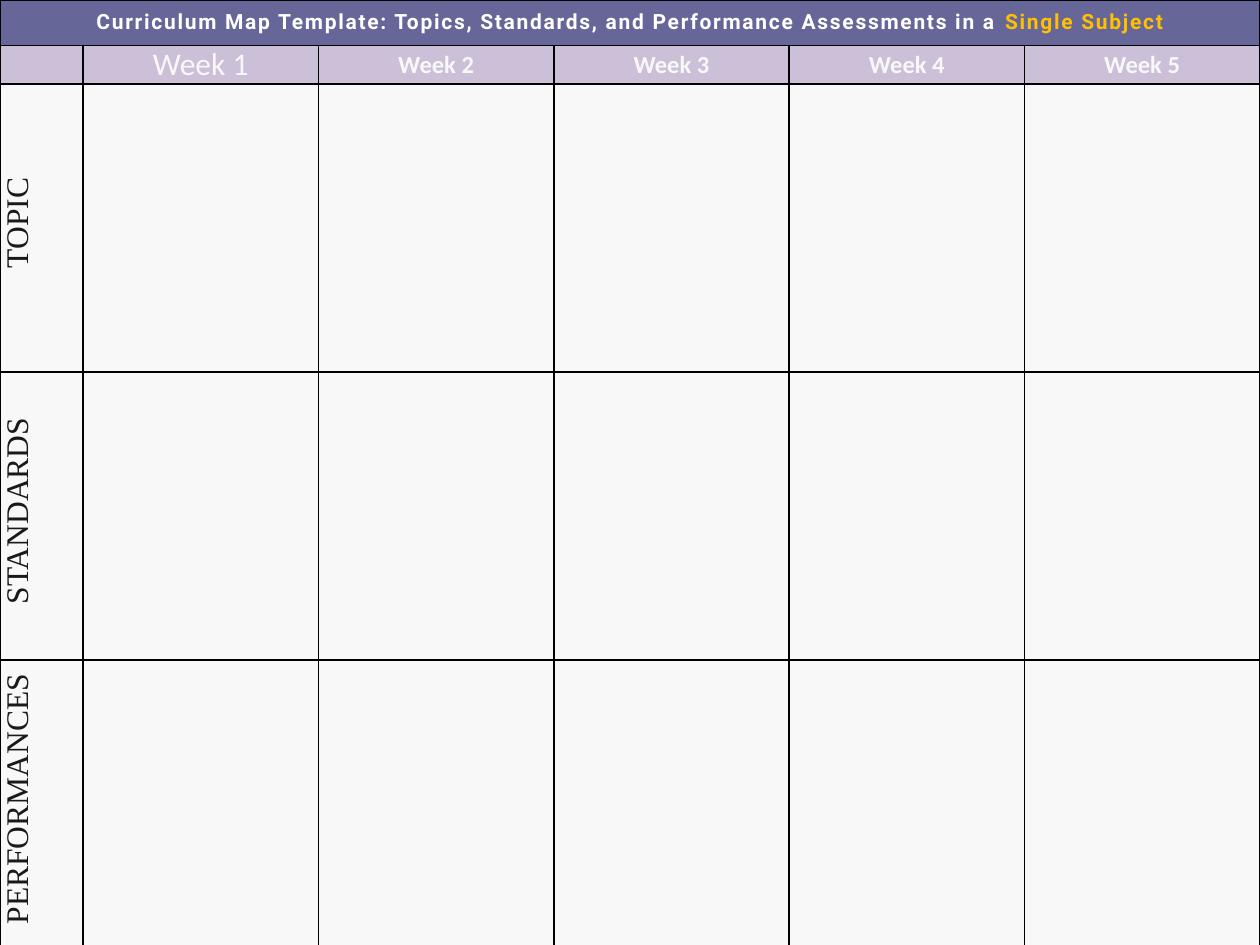
import lxml.etree
import pptx
import pptx.dml.color
import pptx.enum.text
import pptx.oxml.ns
import pptx.util

RGBColor = pptx.dml.color.RGBColor
NAVY = RGBColor(0x03, 0x1F, 0x73)
PURPLE = RGBColor(0x66, 0x66, 0x99)
LILAC = RGBColor(0xCC, 0xC0, 0xD9)
PAPER = RGBColor(0xF8, 0xF8, 0xF8)
WHITE = RGBColor(0xFF, 0xFF, 0xFF)
GOLD = RGBColor(0xFF, 0xC0, 0x00)
INK = RGBColor(0x19, 0x19, 0x19)
BLACK = RGBColor(0, 0, 0)

WIDTH, HEIGHT = 10, 7.5
LABEL_WIDTH = 0.66
TITLE_HEIGHT, WEEK_HEIGHT, TABLE_HEIGHT = 0.36, 0.29, 7.51
WEEKS = 5
SECTIONS = ["TOPIC", "STANDARDS", "PERFORMANCES"]


def add_text(paragraph, text, font="Calibri", size=14, color=PAPER, bold=False, spacing=0):
    """Add a formatted run; spacing is the letter spacing in points."""
    paragraph.alignment = pptx.enum.text.PP_ALIGN.CENTER
    run = paragraph.add_run()
    run.text = text
    run.font.name = font
    run.font.size = pptx.util.Pt(size)
    run.font.bold = bold
    run.font.color.rgb = color
    if spacing:
        run.font._element.set("spc", str(int(spacing * 100)))


class CurriculumMap:
    def __init__(self, presentation):
        self.slide = presentation.slides.add_slide(presentation.slide_layouts[6])
        background = self.slide.background.fill
        background.solid()
        background.fore_color.rgb = NAVY

    def grid(self, column_widths, row_heights):
        """Add an unstyled table with the given tracks in inches."""
        inches = pptx.util.Inches
        shape = self.slide.shapes.add_table(
            len(row_heights), len(column_widths), 0, 0,
            inches(sum(column_widths)), inches(sum(row_heights)))
        self.table = shape.table
        self.table.first_row = self.table.horz_banding = False
        for column, width in zip(self.table.columns, column_widths):
            column.width = inches(width)
        for row, height in zip(self.table.rows, row_heights):
            row.height = inches(height)

    def cell(self, row, column, fill):
        """Fill and border one cell, and return its paragraph."""
        cell = self.table.cell(row, column)
        cell.margin_left = cell.margin_right = pptx.util.Inches(0.05)
        cell.margin_top = cell.margin_bottom = 0
        cell.vertical_anchor = pptx.enum.text.MSO_ANCHOR.MIDDLE
        cell.fill.solid()
        cell.fill.fore_color.rgb = fill
        self.borders(cell)
        paragraph = cell.text_frame.paragraphs[0]
        paragraph.font.size = pptx.util.Pt(12)
        return paragraph

    def borders(self, cell):
        name = pptx.oxml.ns.qn
        properties = cell._tc.get_or_add_tcPr()
        for index, side in enumerate(("a:lnL", "a:lnR", "a:lnT", "a:lnB")):
            line = lxml.etree.Element(name(side), w=str(pptx.util.Pt(1)))
            fill = lxml.etree.SubElement(line, name("a:solidFill"))
            lxml.etree.SubElement(fill, name("a:srgbClr"), val=str(BLACK))
            properties.insert(index, line)

    def row_label(self, row, text):
        """Write a section name that reads upwards."""
        paragraph = self.cell(row, 0, PAPER)
        self.table.cell(row, 0)._tc.get_or_add_tcPr().set("vert", "vert270")
        paragraph._p.get_or_add_pPr().set("marL", str(pptx.util.Inches(0.08)))
        add_text(paragraph, text, font="Times New Roman", size=18, color=INK)


def main():
    presentation = pptx.Presentation()
    presentation.slide_width = pptx.util.Inches(WIDTH)
    presentation.slide_height = pptx.util.Inches(HEIGHT)
    page = CurriculumMap(presentation)

    week_width = (WIDTH - LABEL_WIDTH) / WEEKS
    section_height = (TABLE_HEIGHT - TITLE_HEIGHT - WEEK_HEIGHT) / len(SECTIONS)
    page.grid([LABEL_WIDTH] + [week_width] * WEEKS,
              [TITLE_HEIGHT, WEEK_HEIGHT] + [section_height] * len(SECTIONS))

    # Title across the whole width
    title, *_ = [page.cell(0, column, PURPLE) for column in range(WEEKS + 1)]
    page.table.cell(0, 0).merge(page.table.cell(0, WEEKS))
    title_format = dict(font="Roboto", size=12, bold=True, spacing=1)
    add_text(title, "Curriculum Map Template: Topics, Standards, and Performance Assessments in a ",
             color=WHITE, **title_format)
    add_text(title, "Single Subject", color=GOLD, **title_format)

    # Week headings; the first is larger and regular
    page.cell(1, 0, LILAC)
    for week in range(1, WEEKS + 1):
        first = week == 1
        add_text(page.cell(1, week, LILAC), f"Week {week}",
                 size=18 if first else 14, bold=not first)

    # Sections with an empty cell for each week
    for row, section in enumerate(SECTIONS, start=2):
        page.row_label(row, section)
        for week in range(1, WEEKS + 1):
            page.cell(row, week, PAPER)

    presentation.save("out.pptx")


if __name__ == "__main__":
    main()
